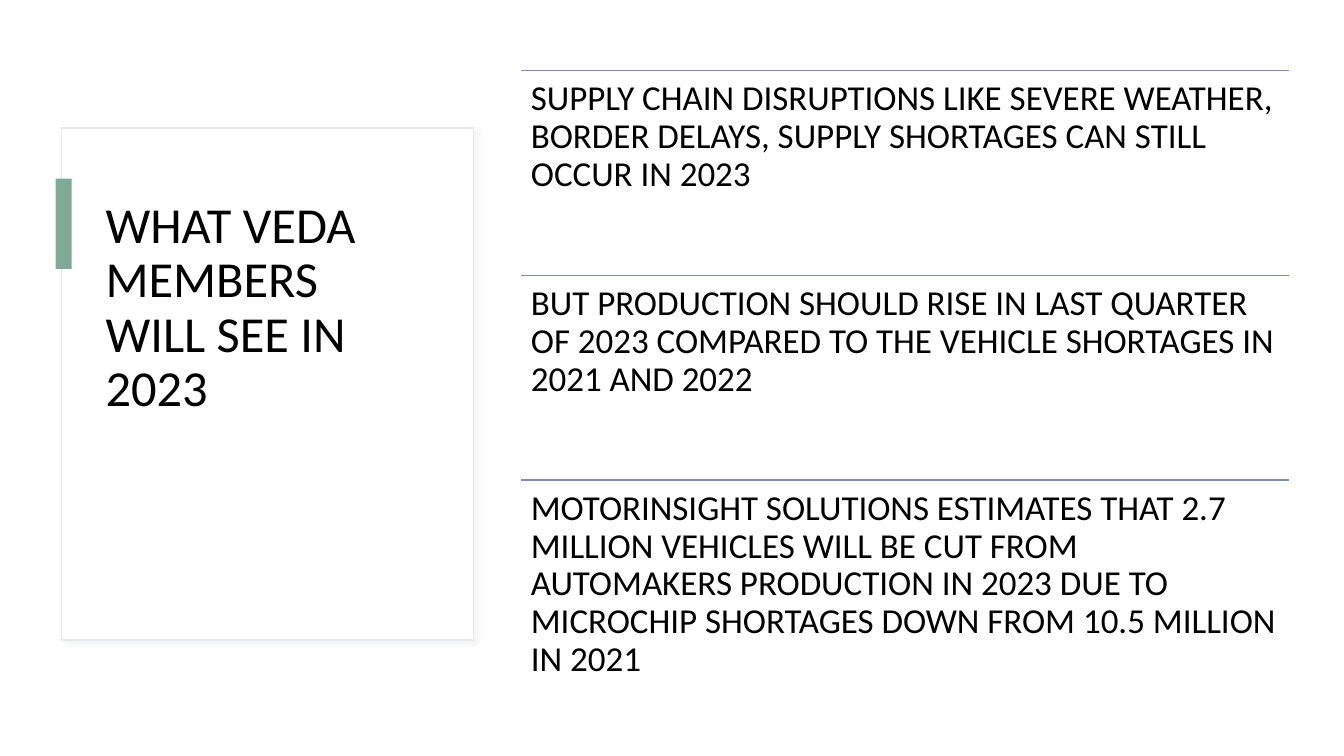
"""Build a slide with a title card and three ruled outlook statements."""
from lxml import etree
from pptx import Presentation
from pptx.dml.color import RGBColor
from pptx.enum.shapes import MSO_CONNECTOR, MSO_SHAPE
from pptx.enum.text import MSO_ANCHOR, MSO_AUTO_SIZE, PP_ALIGN
from pptx.oxml.ns import qn
from pptx.util import Cm, Pt

RECTANGLE = MSO_SHAPE.RECTANGLE
STRAIGHT = MSO_CONNECTOR.STRAIGHT
TOP = MSO_ANCHOR.TOP
LEFT = PP_ALIGN.LEFT
NO_AUTOSIZE = MSO_AUTO_SIZE.NONE

TITLE = "WHAT VEDA MEMBERS WILL SEE IN 2023"
STATEMENTS = [
    "SUPPLY CHAIN DISRUPTIONS LIKE SEVERE WEATHER, BORDER DELAYS, "
    "SUPPLY SHORTAGES CAN STILL OCCUR IN 2023",
    "BUT PRODUCTION SHOULD RISE IN LAST QUARTER OF 2023 COMPARED TO "
    "THE VEHICLE SHORTAGES IN 2021 AND 2022",
    "MOTORINSIGHT SOLUTIONS ESTIMATES THAT 2.7 MILLION VEHICLES WILL BE "
    "CUT FROM AUTOMAKERS PRODUCTION IN 2023 DUE TO MICROCHIP SHORTAGES "
    "DOWN FROM 10.5 MILLION IN 2021",
]
COLORS = {
    "white": "FFFFFF",
    "text": "000000",
    "card_line": "E5EAF0",
    "shadow": "D9D9D9",
    "accent": "81AA96",
    "rule": "7F8DBA",
}
FONT = "Calibri"
INSET = Cm(0.25)
CARD = (Cm(1.55), Cm(3.23), Cm(10.39), Cm(12.9))
TITLE_BOX = (Cm(2.41), Cm(4.78), Cm(8.61), Cm(9.78))
ACCENT_BAR = (Cm(1.4), Cm(4.5), Cm(0.41), Cm(2.28))
LIST_LEFT, LIST_TOP, LIST_WIDTH = Cm(13.13), Cm(1.78), Cm(19.35)
ROW_HEIGHT = Cm(5.16)


def color(name):
    return RGBColor.from_string(COLORS[name])


def add_rectangle(slide, box, fill, line=None):
    shape = slide.shapes.add_shape(RECTANGLE, *box)
    shape.shadow.inherit = False
    shape.fill.solid()
    shape.fill.fore_color.rgb = color(fill)
    if line:
        shape.line.color.rgb = color(line)
        shape.line.width = Pt(1)
    else:
        shape.line.fill.background()
    return shape


def add_soft_shadow(shape):
    effects = shape._element.spPr.find(qn("a:effectLst"))
    shadow = etree.SubElement(
        effects, qn("a:outerShdw"), blurRad=str(Pt(4)), dist=str(Pt(3)),
        dir="2700000", algn="tl", rotWithShape="0")
    shade = etree.SubElement(shadow, qn("a:srgbClr"), val=COLORS["shadow"])
    etree.SubElement(shade, qn("a:alpha"), val="30000")


def write_text(shape, text, size):
    frame = shape.text_frame
    frame.text = text
    frame.word_wrap = True
    frame.auto_size = NO_AUTOSIZE
    frame.vertical_anchor = TOP
    frame.margin_left = frame.margin_right = INSET
    frame.margin_top = frame.margin_bottom = INSET
    paragraph = frame.paragraphs[0]
    paragraph.alignment = LEFT
    paragraph.line_spacing = 0.9
    paragraph.font.name = FONT
    paragraph.font.size = Pt(size)
    paragraph.font.color.rgb = color("text")


def add_rule(slide, top):
    rule = slide.shapes.add_connector(
        STRAIGHT, LIST_LEFT, top, LIST_LEFT + LIST_WIDTH, top)
    rule.line.color.rgb = color("rule")
    rule.line.width = Pt(1)
    etree.SubElement(rule._element.spPr, qn("a:effectLst"))


def add_statement(slide, text, top):
    add_rule(slide, top)
    box = slide.shapes.add_textbox(LIST_LEFT, top, LIST_WIDTH, ROW_HEIGHT)
    write_text(box, text, 25)


def main():
    presentation = Presentation()
    presentation.slide_width = Cm(33.87)
    presentation.slide_height = Cm(19.05)
    slide = presentation.slides.add_slide(presentation.slide_layouts[5])

    card = add_rectangle(slide, CARD, "white", "card_line")
    add_soft_shadow(card)
    title = slide.shapes.title
    title.left, title.top, title.width, title.height = TITLE_BOX
    write_text(title, TITLE, 36)
    card._element.addnext(title._element)
    add_rectangle(slide, ACCENT_BAR, "accent")

    for row, text in enumerate(STATEMENTS):
        add_statement(slide, text, LIST_TOP + row * ROW_HEIGHT)
    presentation.save("out.pptx")


if __name__ == "__main__":
    main()
